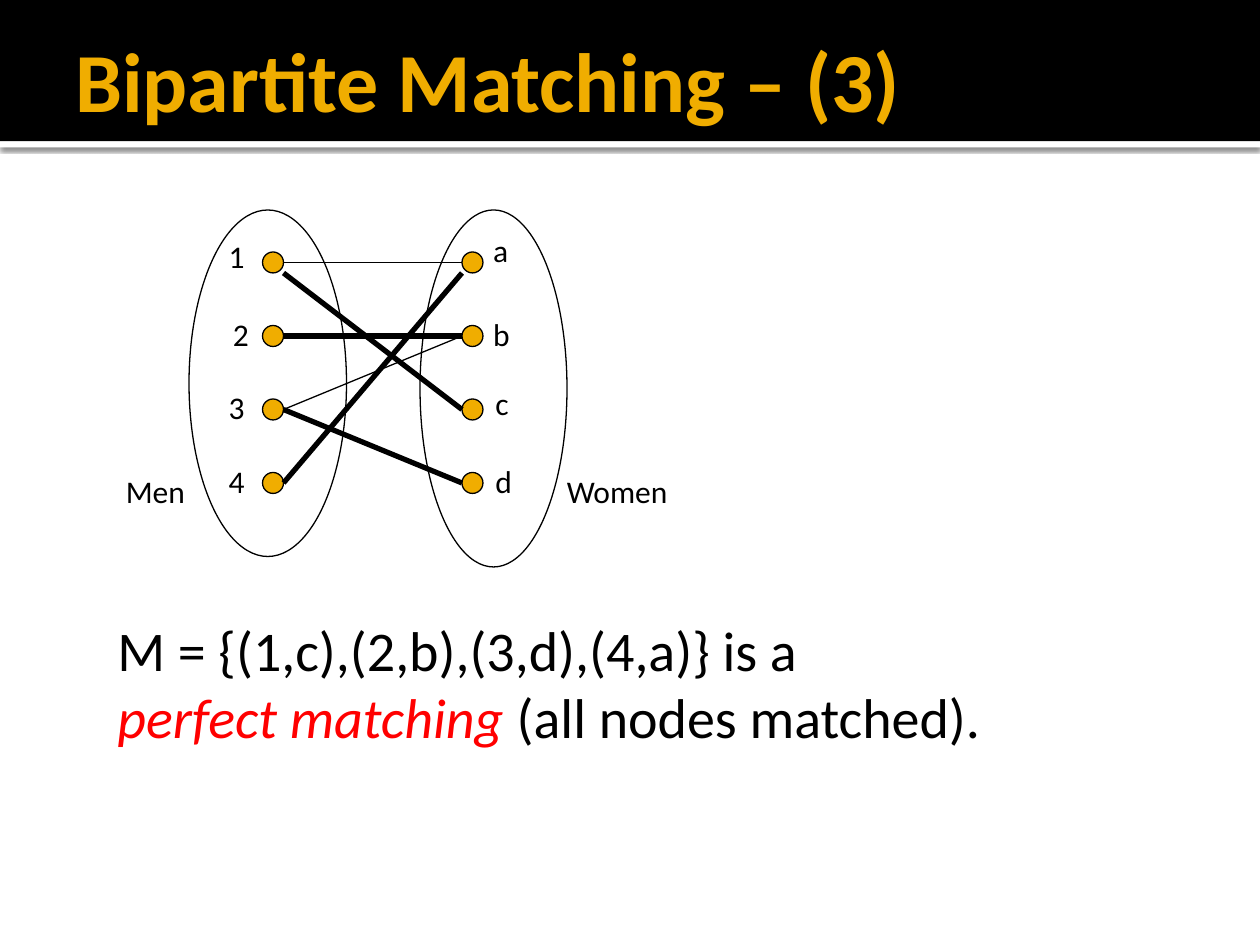
from lxml.etree import SubElement
from pptx import Presentation
from pptx.dml.color import RGBColor
from pptx.enum.shapes import MSO_CONNECTOR, MSO_SHAPE
from pptx.enum.text import MSO_ANCHOR, MSO_AUTO_SIZE
from pptx.oxml.ns import qn
from pptx.util import Inches, Pt

BLACK = RGBColor(0x00, 0x00, 0x00)
WHITE = RGBColor(0xFF, 0xFF, 0xFF)
GOLD = RGBColor(0xF0, 0xAD, 0x00)
RED = RGBColor(0xFF, 0x00, 0x00)


class Deck:
    """Style and current slide; lengths are cells of a 120 x 90 grid."""
    font = "Calibri"
    cell = Inches(10) / 120

    def __init__(self):
        self.prs = Presentation()
        self.prs.slide_width, self.prs.slide_height = Inches(10), Inches(7.5)
        self.slide = self.prs.slides.add_slide(self.prs.slide_layouts[6])

    def grid(self, *cells):
        return [round(c * self.cell) for c in cells]

    def shape(self, kind, box, fill=None, line=None):
        sp = self.slide.shapes.add_shape(kind, *self.grid(*box))
        sp.shadow.inherit = False
        if fill is None:
            sp.fill.background()
        else:
            sp.fill.solid()
            sp.fill.fore_color.rgb = fill
        if line is None:
            sp.line.fill.background()
        else:
            sp.line.color.rgb = line
            sp.line.width = Pt(0.75)
        return sp

    def drop_shadow(self, sp, blur, dist, alpha):
        effects = sp._element.spPr.find(qn("a:effectLst"))
        shadow = SubElement(effects, qn("a:outerShdw"), blurRad=str(Pt(blur)),
                            dist=str(Pt(dist)), dir="5400000",
                            algn="t", rotWithShape="0")
        color = SubElement(shadow, qn("a:srgbClr"), val=str(BLACK))
        SubElement(color, qn("a:alpha"), val=str(alpha * 1000))

    def line(self, start, end, width):
        cn = self.slide.shapes.add_connector(
            MSO_CONNECTOR.STRAIGHT, *self.grid(*start, *end))
        cn.line.color.rgb = BLACK
        cn.line.width = Pt(width)
        SubElement(cn._element.spPr, qn("a:effectLst"))

    def text(self, box, paragraphs, size, bold=False, wrap=False):
        """Each paragraph is a list of (text, colour, italic) runs."""
        sp = self.slide.shapes.add_textbox(*self.grid(*box))
        tf = sp.text_frame
        tf.word_wrap = wrap
        tf.auto_size = MSO_AUTO_SIZE.NONE if wrap else MSO_AUTO_SIZE.SHAPE_TO_FIT_TEXT
        for i, runs in enumerate(paragraphs):
            p = tf.add_paragraph() if i else tf.paragraphs[0]
            for text, color, italic in runs:
                r = p.add_run()
                r.text = text
                r.font.name, r.font.size = self.font, Pt(size)
                r.font.bold, r.font.italic = bold, italic
                r.font.color.rgb = color
        return tf

    def label(self, text, col, row, width):
        self.text((col, row, width, 4.8), [[(text, BLACK, False)]], 18)


def main():
    deck = Deck()

    # Title band
    strip = deck.shape(MSO_SHAPE.RECTANGLE, (0, 13.44, 120, 0.6), WHITE)
    deck.drop_shadow(strip, blur=2.5, dist=0.8, alpha=60)
    deck.shape(MSO_SHAPE.RECTANGLE, (0, 0, 120, 13.44), BLACK)
    tf = deck.text((6, 1, 114, 13), [[("Bipartite Matching – (3)", GOLD, False)]],
                   48, bold=True, wrap=True)
    tf.vertical_anchor = MSO_ANCHOR.MIDDLE
    tf.margin_right = Inches(0.05)

    # Nodes: two columns of four
    men_col, women_col, node = 25, 44, 2
    rows = [24 + 7 * i for i in range(4)]
    for col in (men_col, women_col):
        for row in rows:
            deck.shape(MSO_SHAPE.OVAL, (col, row, node, node), GOLD, BLACK)

    # Edges: start row, end row, width; heavy ones form the matching
    edges = [(25, 25, 0.25), (26, 39, 3), (32, 32, 3),
             (39, 32, 0.75), (39, 46, 3), (46, 26, 3)]
    for start, end, width in edges:
        deck.line((men_col + node, start), (women_col, end), width)

    # Node labels
    for text, col, row in [("1", 20.6, 22), ("2", 21, 29.4),
                           ("3", 20.6, 36.4), ("4", 20.6, 43.4),
                           ("a", 45.8, 21.4), ("b", 45.8, 29.4),
                           ("c", 46, 36), ("d", 46, 43.4)]:
        deck.label(text, col, row, 4.3)

    # The two sets
    deck.shape(MSO_SHAPE.OVAL, (18, 20, 15, 33), line=BLACK)
    deck.shape(MSO_SHAPE.OVAL, (40, 20, 14, 34), line=BLACK)
    deck.label("Men", 10.8, 44.4, 8)
    deck.label("Women", 52.8, 44.4, 12.2)

    # Conclusion
    deck.text((10, 58, 86.6, 14.2), [
        [("M = {(1,c),(2,b),(3,d),(4,a)} is a", BLACK, False)],
        [("perfect matching ", RED, True),
         ("(all nodes matched).", BLACK, False)],
    ], 32)

    deck.prs.save("out.pptx")


if __name__ == "__main__":
    main()
